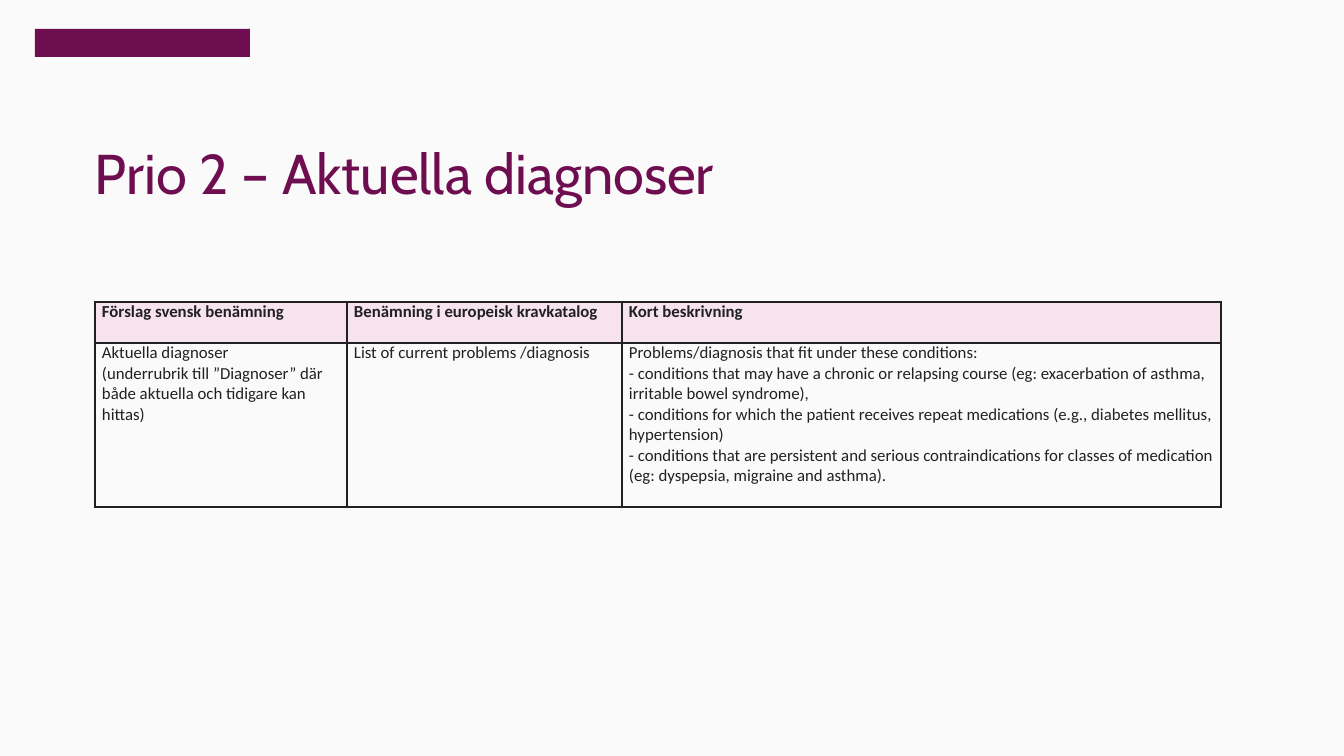
from dataclasses import dataclass

from lxml import etree
from pptx import Presentation
from pptx.dml.color import RGBColor
from pptx.enum import shapes, text
from pptx.oxml.ns import qn
from pptx import util as u

SCALE = 12192000 / 1344


@dataclass(frozen=True)
class Theme:
    paper: str = "FAFAFA"
    plum: str = "6E0E50"
    ink: str = "212121"
    pink: str = "F7E3ED"
    title_font: str = "Cabin"
    table_font: str = "Calibri"
    title_size: int = 40
    table_size: int = 12
    border: int = 1


@dataclass(frozen=True)
class Column:
    width: int
    head: str
    body: str


THEME = Theme()
ROWS = (41, 164)
COLUMNS = (
    Column(252, "Förslag svensk benämning",
           "Aktuella diagnoser\n"
           "(underrubrik till ”Diagnoser” där både aktuella och tidigare kan hittas)"),
    Column(275, "Benämning i europeisk kravkatalog",
           "List of current problems /diagnosis"),
    Column(599, "Kort beskrivning",
           "Problems/diagnosis that fit under these conditions:\n"
           "- conditions that may have a chronic or relapsing course "
           "(eg: exacerbation of asthma, irritable bowel syndrome),\n"
           "- conditions for which the patient receives repeat medications "
           "(e.g., diabetes mellitus, hypertension)\n"
           "- conditions that are persistent and serious contraindications "
           "for classes of medication (eg: dyspepsia, migraine and asthma)."),
)


def px(count: int) -> u.Emu:
    return u.Emu(round(count * SCALE))


def style(frame, font: str, size: int, color: str, bold: bool = False) -> None:
    for para in frame.paragraphs:
        for run in para.runs:
            run.font.name = font
            run.font.size = u.Pt(size)
            run.font.bold = bold
            run.font.color.rgb = RGBColor.from_string(color)


def add_badge(slide) -> None:
    badge = slide.shapes.add_shape(
        shapes.MSO_SHAPE.RECTANGLE, px(35), px(29), px(215), px(28))
    badge.shadow.inherit = False
    badge.fill.solid()
    badge.fill.fore_color.rgb = RGBColor.from_string(THEME.plum)
    badge.line.fill.background()


def add_title(slide, words: str) -> None:
    frame = slide.shapes.add_textbox(px(95), px(146), px(1155), px(61)).text_frame
    frame.margin_left = frame.margin_right = 0
    frame.margin_top = frame.margin_bottom = 0
    frame.word_wrap = True
    frame.vertical_anchor = text.MSO_ANCHOR.BOTTOM
    frame.text = words
    frame.paragraphs[0].line_spacing = 0.9
    style(frame, THEME.title_font, THEME.title_size, THEME.plum)


def add_border(cell) -> None:
    props = cell._tc.get_or_add_tcPr()
    for side in ("a:lnL", "a:lnR", "a:lnT", "a:lnB"):
        line = etree.SubElement(props, qn(side), w=str(u.Pt(THEME.border)))
        fill = etree.SubElement(line, qn("a:solidFill"))
        etree.SubElement(fill, qn("a:srgbClr"), val=THEME.ink)


def fill_cell(cell, words: str, head: bool) -> None:
    cell.margin_left = cell.margin_right = px(7)
    cell.margin_top = cell.margin_bottom = 0
    cell.text_frame.text = words
    style(cell.text_frame, THEME.table_font, THEME.table_size, THEME.ink, head)
    add_border(cell)
    if head:
        cell.fill.solid()
        cell.fill.fore_color.rgb = RGBColor.from_string(THEME.pink)
    else:
        cell.fill.background()


def add_grid(slide) -> None:
    width = sum(column.width for column in COLUMNS)
    grid = slide.shapes.add_table(
        len(ROWS), len(COLUMNS), px(95), px(302), px(width), px(sum(ROWS))).table
    grid.first_row = grid.horz_banding = False
    for row, height in zip(grid.rows, ROWS):
        row.height = px(height)
    for index, column in enumerate(COLUMNS):
        grid.columns[index].width = px(column.width)
        fill_cell(grid.cell(0, index), column.head, True)
        fill_cell(grid.cell(1, index), column.body, False)


def main() -> None:
    deck = Presentation()
    deck.slide_width, deck.slide_height = px(1344), px(756)
    slide = deck.slides.add_slide(deck.slide_layouts[6])
    slide.background.fill.solid()
    slide.background.fill.fore_color.rgb = RGBColor.from_string(THEME.paper)
    add_badge(slide)
    add_title(slide, "Prio 2 – Aktuella diagnoser")
    add_grid(slide)
    deck.save("out.pptx")


if __name__ == "__main__":
    main()
